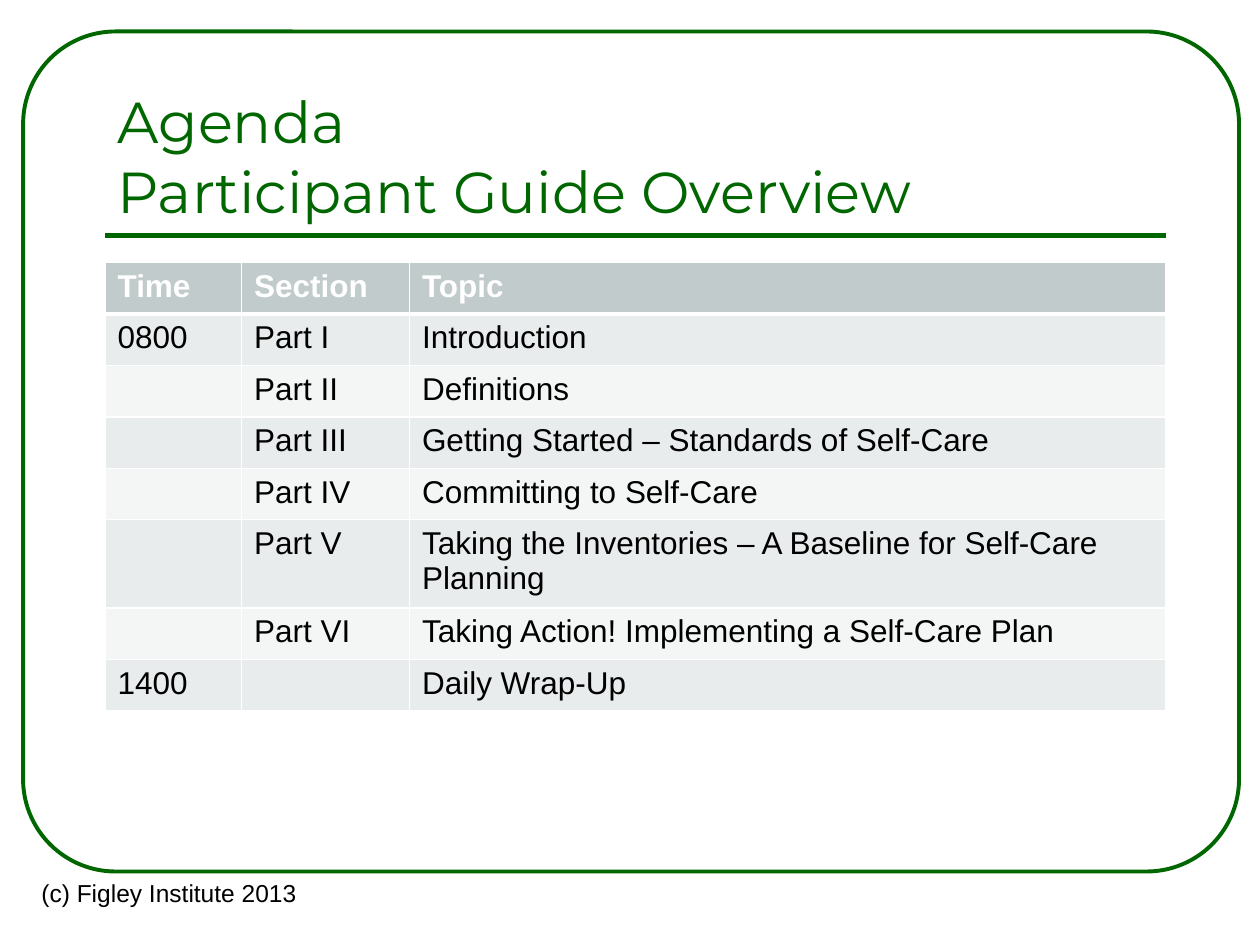
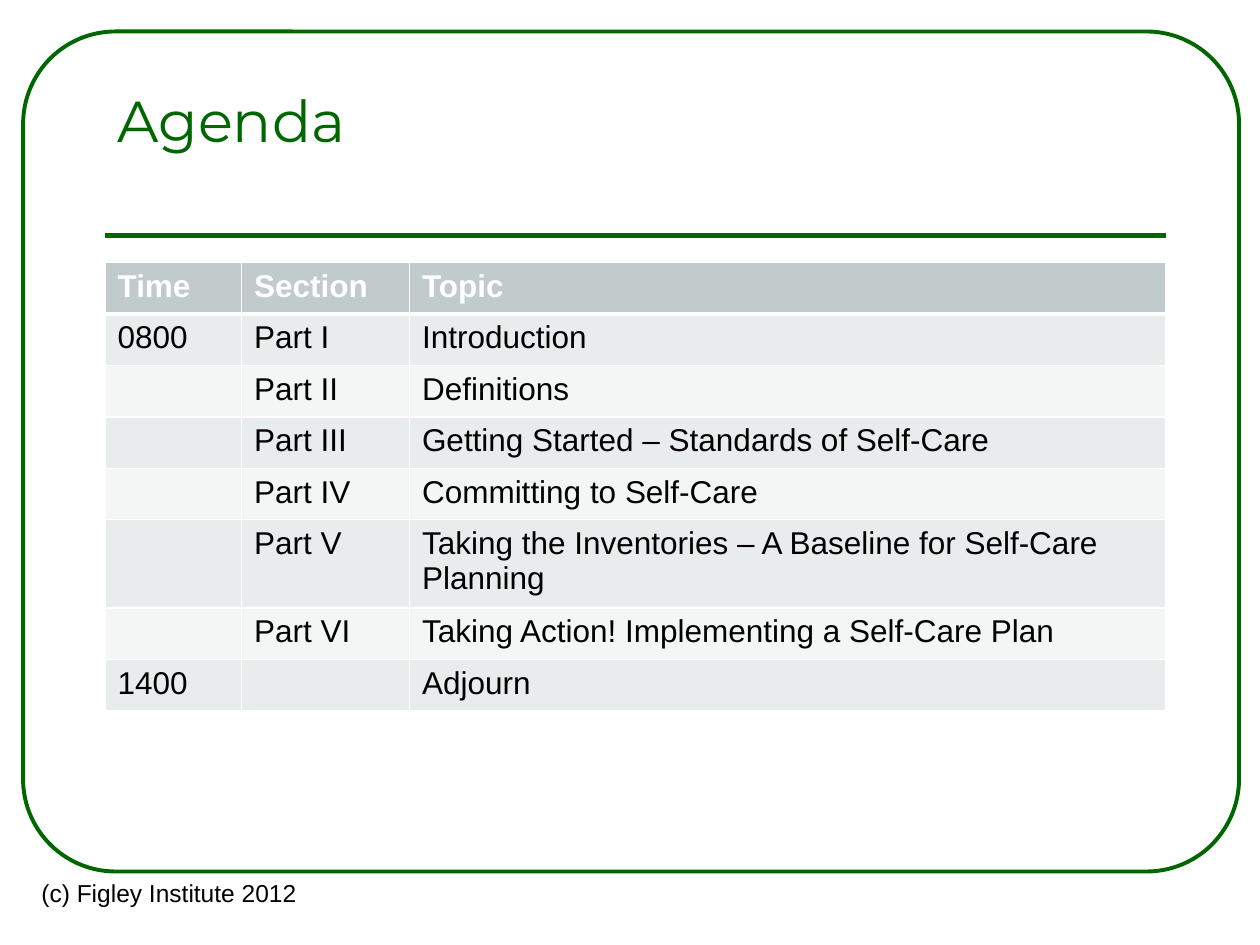
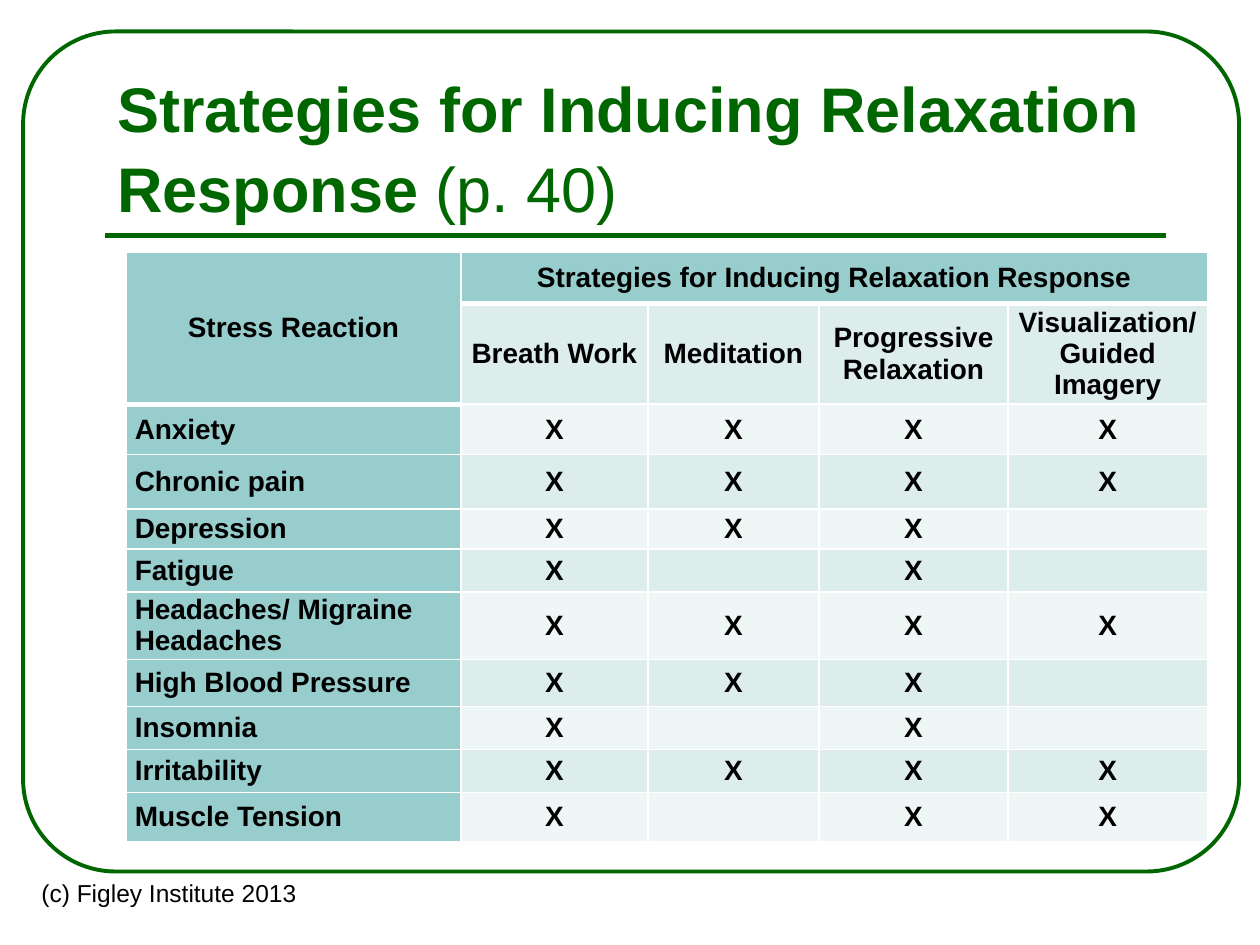
from lxml.etree import SubElement
from pptx import Presentation
from pptx.dml.color import RGBColor
from pptx.enum.shapes import MSO_CONNECTOR, MSO_SHAPE
from pptx.enum.text import MSO_ANCHOR, PP_ALIGN
from pptx.oxml.ns import qn
from pptx.util import Inches, Pt

GREEN = RGBColor(0x00, 0x66, 0x00)
BLACK = RGBColor(0x00, 0x00, 0x00)
WHITE = RGBColor(0xFF, 0xFF, 0xFF)
GREY_HEADER = RGBColor(0xC2, 0xCB, 0xCB)
GREY_BANDS = (RGBColor(0xE9, 0xEC, 0xEC), RGBColor(0xF4, 0xF6, 0xF6))
TEAL_HEADER = RGBColor(0x97, 0xCD, 0xCC)
TEAL_BANDS = (RGBColor(0xDD, 0xED, 0xEC), RGBColor(0xEF, 0xF6, 0xF6))

BODY_FONT = "Arial"
TITLE_FONT = "Montserrat"
GRID_COLUMNS, GRID_ROWS = 120, 90
THIN, THICK = Pt(1), Pt(3)

AGENDA_COLUMNS = (13, 16, 72)
AGENDA_ROW = 4.9
AGENDA_HEADER = ("Time", "Section", "Topic")
AGENDA_TOPICS = (
    ("0800", "Part I", "Introduction"),
    ("", "Part II", "Definitions"),
    ("", "Part III", "Getting Started – Standards of Self-Care"),
    ("", "Part IV", "Committing to Self-Care"),
    ("", "Part V", "Taking the Inventories – A Baseline for Self-Care Planning"),
    ("", "Part VI", "Taking Action! Implementing a Self-Care Plan"),
)

STRATEGY_COLUMNS = (31.9, 17.8, 16.3, 18, 19)
STRATEGY_ROWS = (4.9, 8.3, 4.8, 5.2, 3.8, 4.1, 5.5, 4.5, 4.1, 4.1, 4.7)
STRATEGIES = ("Breath Work", "Meditation", "Progressive Relaxation",
              "Visualization/ Guided Imagery")
REACTIONS = (
    ("Anxiety", "XXXX"),
    ("Chronic pain", "XXXX"),
    ("Depression", "XXX-"),
    ("Fatigue", "X-X-"),
    ("Headaches/ Migraine Headaches", "XXXX"),
    ("High Blood Pressure", "XXX-"),
    ("Insomnia", "X-X-"),
    ("Irritability", "XXXX"),
    ("Muscle Tension", "X-XX"),
)


class Deck:
    def __init__(self):
        self.deck = Presentation()
        self.deck.slide_width = Inches(10)
        self.deck.slide_height = Inches(7.5)
        self.page = None

    def across(self, columns):
        return round(self.deck.slide_width * columns / GRID_COLUMNS)

    def down(self, rows):
        return round(self.deck.slide_height * rows / GRID_ROWS)

    def area(self, left, top, width, height):
        return self.across(left), self.down(top), self.across(width), self.down(height)

    def add_page(self, year):
        self.page = self.deck.slides.add_slide(self.deck.slide_layouts[6])
        self.frame()
        self.rule()
        self.footer(f"(c) Figley Institute {year}")

    def frame(self):
        frame = self.page.shapes.add_shape(
            MSO_SHAPE.ROUNDED_RECTANGLE, *self.area(2.2, 3, 115.8, 80))
        frame.adjustments[0] = 0.11
        frame.shadow.inherit = False
        frame.fill.background()
        frame.line.color.rgb = GREEN
        frame.line.width = Pt(2.25)

    def rule(self):
        height = self.down(22.4)
        rule = self.page.shapes.add_connector(
            MSO_CONNECTOR.STRAIGHT, self.across(10), height, self.across(111), height)
        rule.line.color.rgb = GREEN
        rule.line.width = THICK
        SubElement(rule.element.spPr, qn("a:effectLst"))

    def text_box(self, *area):
        box = self.page.shapes.add_textbox(*self.area(*area))
        box.text_frame.word_wrap = True
        return box.text_frame

    def span(self, para, text, size, color, font=BODY_FONT, bold=False):
        span = para.add_run()
        span.text = text
        span.font.size = Pt(size)
        span.font.name = font
        span.font.color.rgb = color
        span.font.bold = bold

    def title(self, spans, size, font, lift=0, spacing=1.0):
        frame = self.text_box(10, 7, 101, 15)
        frame.vertical_anchor = MSO_ANCHOR.BOTTOM
        frame.margin_bottom += self.down(lift)
        para = frame.paragraphs[0]
        para.line_spacing = spacing
        for text, bold in spans:
            for index, line in enumerate(text.split("\n")):
                if index:
                    para.add_line_break()
                self.span(para, line, size, GREEN, font, bold)

    def footer(self, text):
        para = self.text_box(2.6, 83, 27, 6).paragraphs[0]
        para.alignment = PP_ALIGN.CENTER
        self.span(para, text, 14, BLACK)

    def table(self, left, top, columns, rows):
        holder = self.page.shapes.add_table(
            len(rows), len(columns), *self.area(left, top, sum(columns), sum(rows)))
        table = holder.table
        table.first_row = table.horz_banding = False
        for column, width in zip(table.columns, columns):
            column.width = self.across(width)
        for row, height in zip(table.rows, rows):
            row.height = self.down(height)
        return table

    def cell(self, cell, text, size, color, fill, bold=False, top=THIN, bottom=THIN):
        self.borders(cell, top, bottom)
        cell.fill.solid()
        cell.fill.fore_color.rgb = fill
        if text:
            self.span(cell.text_frame.paragraphs[0], text, size, color, bold=bold)

    def borders(self, cell, top, bottom):
        properties = cell._tc.get_or_add_tcPr()
        for side, width in (("L", THIN), ("R", THIN), ("T", top), ("B", bottom)):
            line = SubElement(properties, qn(f"a:ln{side}"), w=str(int(width)))
            fill = SubElement(line, qn("a:solidFill"))
            SubElement(fill, qn("a:srgbClr"), val=str(WHITE))

    def agenda(self, closing):
        rows = (AGENDA_HEADER, *AGENDA_TOPICS, ("1400", "", closing))
        table = self.table(10, 25, AGENDA_COLUMNS, [AGENDA_ROW] * len(rows))
        for row, texts in enumerate(rows):
            header = row == 0
            for column, text in enumerate(texts):
                self.cell(table.cell(row, column), text, 18,
                          WHITE if header else BLACK,
                          GREY_HEADER if header else GREY_BANDS[(row - 1) % 2],
                          header,
                          THICK if row == 1 else THIN,
                          THICK if header else THIN)

    def strategies(self):
        rows = [("Stress Reaction", "Strategies for Inducing Relaxation Response", "", "", ""),
                ("", *STRATEGIES)]
        rows += [(name, *marks.replace("-", " ")) for name, marks in REACTIONS]
        table = self.table(12, 24, STRATEGY_COLUMNS, STRATEGY_ROWS)
        table.cell(0, 0).merge(table.cell(1, 0))
        table.cell(0, 1).merge(table.cell(0, 4))
        for row, texts in enumerate(rows):
            for column, text in enumerate(texts):
                cell = table.cell(row, column)
                label = row == 0 or column == 0
                header_end = 1 if column == 0 else 0
                cell.vertical_anchor = MSO_ANCHOR.MIDDLE
                cell.margin_left = cell.margin_right = Inches(0.07)
                cell.margin_top = cell.margin_bottom = 0
                if row < 2 or column:
                    cell.text_frame.paragraphs[0].alignment = PP_ALIGN.CENTER
                self.cell(cell, text.strip(), 16, BLACK,
                          TEAL_HEADER if label else TEAL_BANDS[(row - 1) % 2],
                          True,
                          THICK if row == header_end + 1 else THIN,
                          THICK if row <= header_end else THIN)


def main():
    deck = Deck()

    deck.add_page(2013)
    deck.title([("Agenda \nParticipant Guide Overview", False)], 33, TITLE_FONT)
    deck.agenda("Daily Wrap-Up")

    deck.add_page(2012)
    deck.title([("Agenda", False)], 33, TITLE_FONT, lift=6.7)
    deck.agenda("Adjourn")

    deck.add_page(2013)
    deck.title([("Strategies for Inducing Relaxation Response ", True), ("(p. 40)", False)],
               36, BODY_FONT, spacing=1.05)
    deck.strategies()

    deck.deck.save("out.pptx")


if __name__ == "__main__":
    main()
